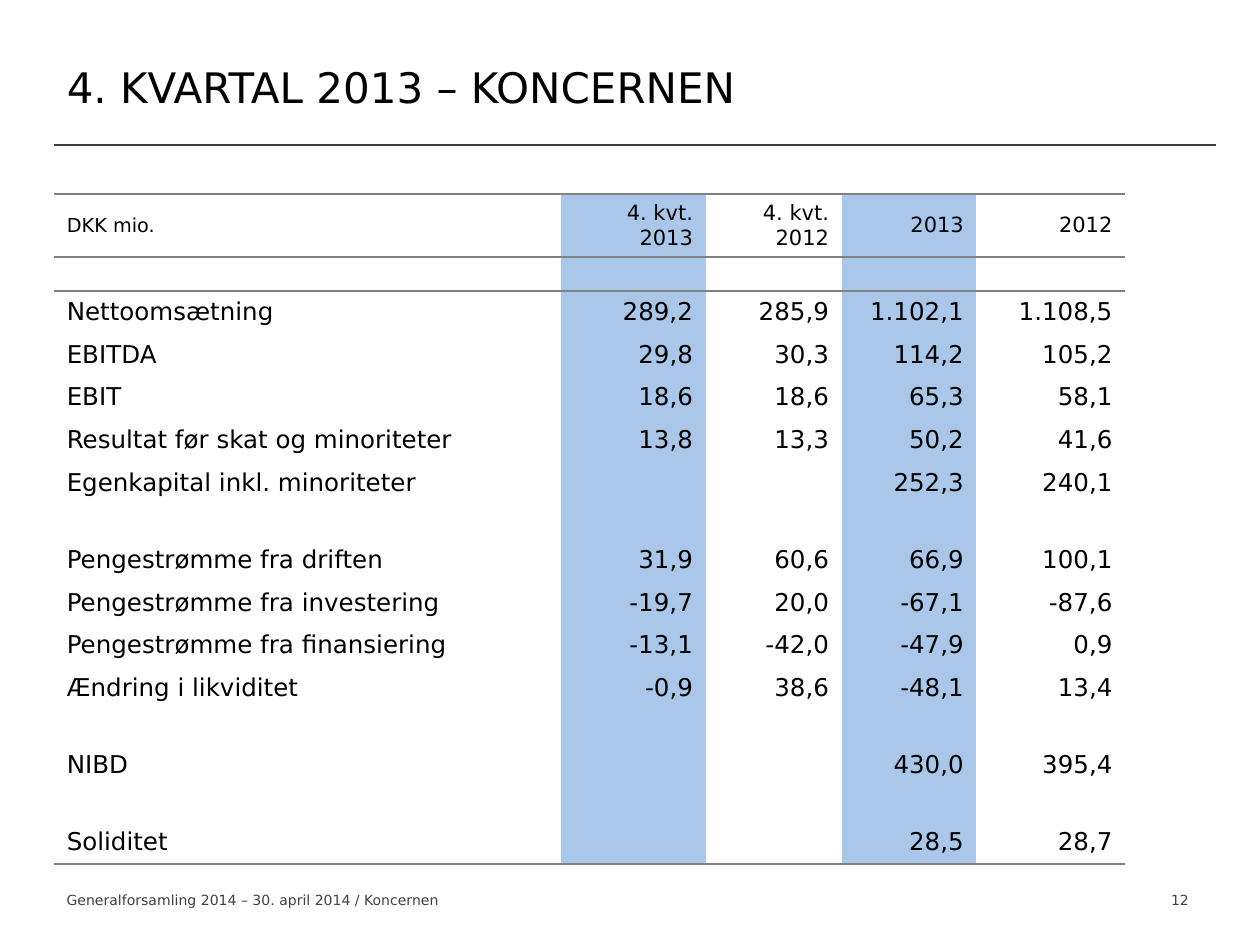
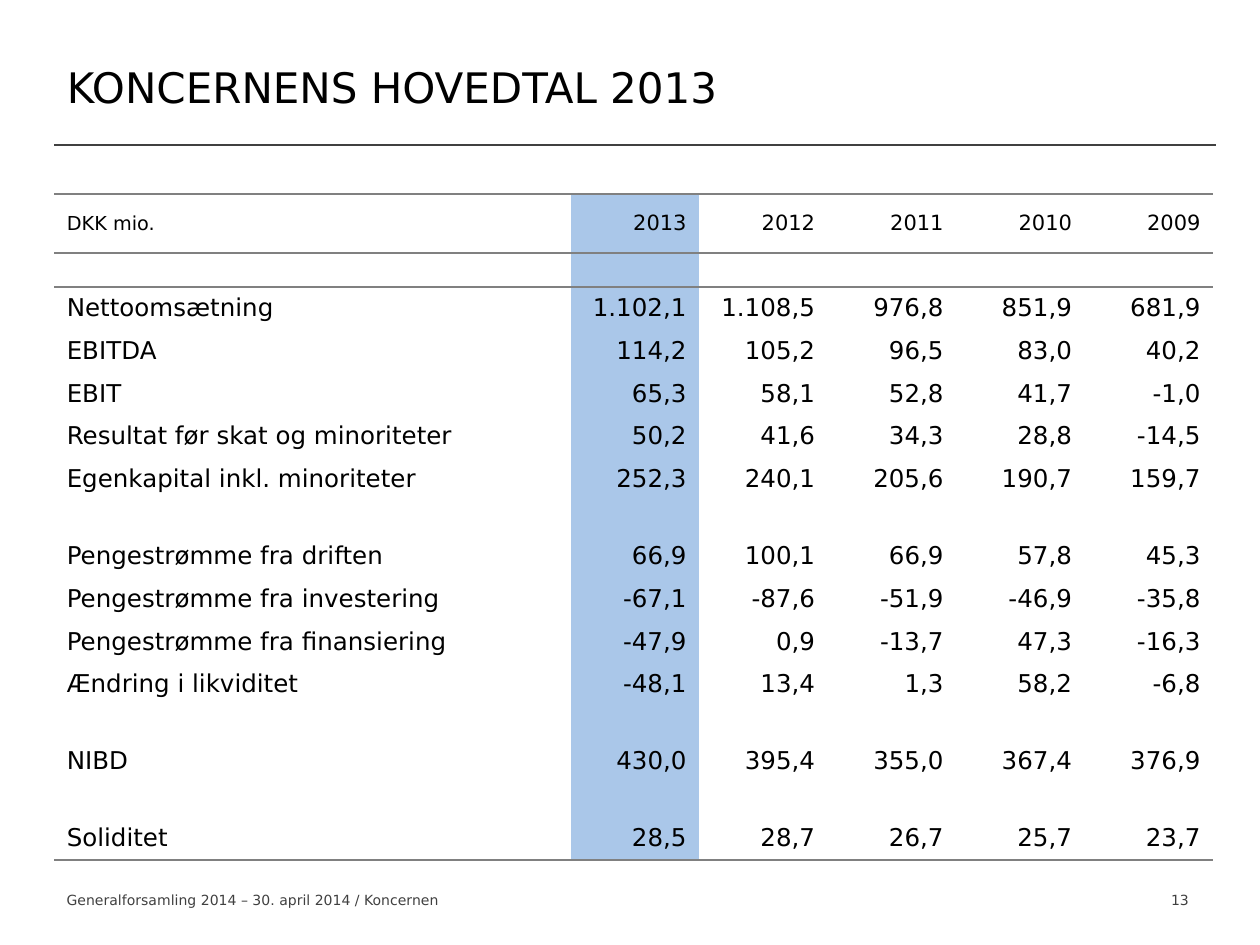
from lxml import etree
from pptx import Presentation
from pptx.dml.color import RGBColor
from pptx.enum.dml import MSO_THEME_COLOR
from pptx.enum.shapes import MSO_CONNECTOR
from pptx.enum.text import MSO_ANCHOR, MSO_AUTO_SIZE, PP_ALIGN
from pptx.oxml.ns import qn
from pptx.util import Inches, Pt

COLOURS = {"text": "000000", "footer": "404040", "rule": "808080", "highlight": "AAC7E9"}
FONT = "DejaVu Sans"
LEFT = 0.43
NO_TABLE_STYLE = "{2D5ABB26-0587-4C30-8999-92F81FD0307C}"
FOOTER = "Generalforsamling 2014 – 30. april 2014 / Koncernen"

# An empty label marks a spacer row.
LABELS = [
    "DKK mio.", "",
    "Nettoomsætning", "EBITDA", "EBIT",
    "Resultat før skat og minoriteter", "Egenkapital inkl. minoriteter", "",
    "Pengestrømme fra driften", "Pengestrømme fra investering",
    "Pengestrømme fra finansiering", "Ændring i likviditet", "",
    "NIBD", "",
    "Soliditet",
]
LAST_ROW = len(LABELS) - 1

PAGES = [
    {
        "title": "4. KVARTAL 2013 – KONCERNEN",
        "number": 12,
        "widths": [4.02, 1.15, 1.08, 1.07, 1.18],
        "header_height": 0.5,
        "highlighted": [1, 3],
        "figures": {
            "DKK mio.": ["4. kvt. 2013", "4. kvt. 2012", "2013", "2012"],
            "Nettoomsætning": ["289,2", "285,9", "1.102,1", "1.108,5"],
            "EBITDA": ["29,8", "30,3", "114,2", "105,2"],
            "EBIT": ["18,6", "18,6", "65,3", "58,1"],
            "Resultat før skat og minoriteter": ["13,8", "13,3", "50,2", "41,6"],
            "Egenkapital inkl. minoriteter": ["", "", "252,3", "240,1"],
            "Pengestrømme fra driften": ["31,9", "60,6", "66,9", "100,1"],
            "Pengestrømme fra investering": ["-19,7", "20,0", "-67,1", "-87,6"],
            "Pengestrømme fra finansiering": ["-13,1", "-42,0", "-47,9", "0,9"],
            "Ændring i likviditet": ["-0,9", "38,6", "-48,1", "13,4"],
            "NIBD": ["", "", "430,0", "395,4"],
            "Soliditet": ["", "", "28,5", "28,7"],
        },
    },
    {
        "title": "KONCERNENS HOVEDTAL 2013",
        "number": 13,
        "widths": [4.1] + [1.02] * 5,
        "header_height": 0.47,
        "highlighted": [1],
        "figures": {
            "DKK mio.": ["2013", "2012", "2011", "2010", "2009"],
            "Nettoomsætning": ["1.102,1", "1.108,5", "976,8", "851,9", "681,9"],
            "EBITDA": ["114,2", "105,2", "96,5", "83,0", "40,2"],
            "EBIT": ["65,3", "58,1", "52,8", "41,7", "-1,0"],
            "Resultat før skat og minoriteter": ["50,2", "41,6", "34,3", "28,8", "-14,5"],
            "Egenkapital inkl. minoriteter": ["252,3", "240,1", "205,6", "190,7", "159,7"],
            "Pengestrømme fra driften": ["66,9", "100,1", "66,9", "57,8", "45,3"],
            "Pengestrømme fra investering": ["-67,1", "-87,6", "-51,9", "-46,9", "-35,8"],
            "Pengestrømme fra finansiering": ["-47,9", "0,9", "-13,7", "47,3", "-16,3"],
            "Ændring i likviditet": ["-48,1", "13,4", "1,3", "58,2", "-6,8"],
            "NIBD": ["430,0", "395,4", "355,0", "367,4", "376,9"],
            "Soliditet": ["28,5", "28,7", "26,7", "25,7", "23,7"],
        },
    },
]


def write(frame, text, size, colour, align=PP_ALIGN.LEFT):
    """Write one formatted run; empty text only keeps the line small."""
    paragraph = frame.paragraphs[0]
    paragraph.alignment = align
    if not text:
        etree.SubElement(paragraph._p, qn("a:endParaRPr"), sz="800")
        return
    run = paragraph.add_run()
    run.text = text
    run.font.name = FONT
    run.font.size = Pt(size)
    run.font.color.rgb = RGBColor.from_string(COLOURS[colour])


def add_border(cell, side):
    line = etree.SubElement(cell._tc.get_or_add_tcPr(), qn(f"a:{side}"), w=str(Pt(1)))
    fill = etree.SubElement(line, qn("a:solidFill"))
    etree.SubElement(fill, qn("a:srgbClr"), val=COLOURS["rule"])


prs = Presentation()
prs.slide_width, prs.slide_height = Inches(10), Inches(7.5)
background = prs.slide_master.background.fill
background.solid()
background.fore_color.theme_color = MSO_THEME_COLOR.BACKGROUND_1

for page in PAGES:
    slide = prs.slides.add_slide(prs.slide_layouts[5])

    title = slide.shapes.title
    title.left, title.top = Inches(LEFT), Inches(0.22)
    title.width, title.height = Inches(8.58), Inches(0.93)
    title.text_frame.auto_size = MSO_AUTO_SIZE.NONE
    title.text_frame.vertical_anchor = MSO_ANCHOR.MIDDLE
    write(title.text_frame, page["title"], 24, "text")

    title_rule = slide.shapes.add_connector(
        MSO_CONNECTOR.STRAIGHT, Inches(LEFT), Inches(1.15), Inches(9.65), Inches(1.15))
    title_rule.line.width = Pt(1.25)
    title_rule.line.color.rgb = RGBColor.from_string(COLOURS["footer"])
    etree.SubElement(title_rule._element.spPr, qn("a:effectLst"))

    for text, left, top, width, align in [
        (FOOTER, LEFT, 7.03, 4.02, PP_ALIGN.LEFT),
        (str(page["number"]), 8.95, 7.03, 0.83, PP_ALIGN.CENTER),
    ]:
        footer = slide.shapes.add_textbox(Inches(left), Inches(top), Inches(width), Inches(0.23))
        footer.text_frame.word_wrap = True
        write(footer.text_frame, text, 8, "footer", align)

    widths = page["widths"]
    heights = [0.34 if label else 0.27 for label in LABELS]
    heights[0] = page["header_height"]
    key_figures = slide.shapes.add_table(
        len(LABELS), len(widths), Inches(LEFT), Inches(1.54),
        Inches(sum(widths)), Inches(sum(heights))).table
    key_figures.first_row = key_figures.horz_banding = False
    key_figures._tbl.tblPr.find(qn("a:tableStyleId")).text = NO_TABLE_STYLE
    for column, width in zip(key_figures.columns, widths):
        column.width = Inches(width)

    for r, (label, height) in enumerate(zip(LABELS, heights)):
        key_figures.rows[r].height = Inches(height)
        figures = page["figures"].get(label, [""] * (len(widths) - 1))
        for c, text in enumerate([label, *figures]):
            cell = key_figures.cell(r, c)
            if r in (0, 1):
                add_border(cell, "lnT")
            if r in (0, LAST_ROW):
                add_border(cell, "lnB")
            if c in page["highlighted"]:
                cell.fill.solid()
                cell.fill.fore_color.rgb = RGBColor.from_string(COLOURS["highlight"])
            else:
                cell.fill.background()
            if r == 0:
                cell.vertical_anchor = MSO_ANCHOR.MIDDLE
                size = 12 if c else 11
            else:
                size = 14
            write(cell.text_frame, text, size, "text", PP_ALIGN.RIGHT if c else PP_ALIGN.LEFT)

prs.save("out.pptx")
